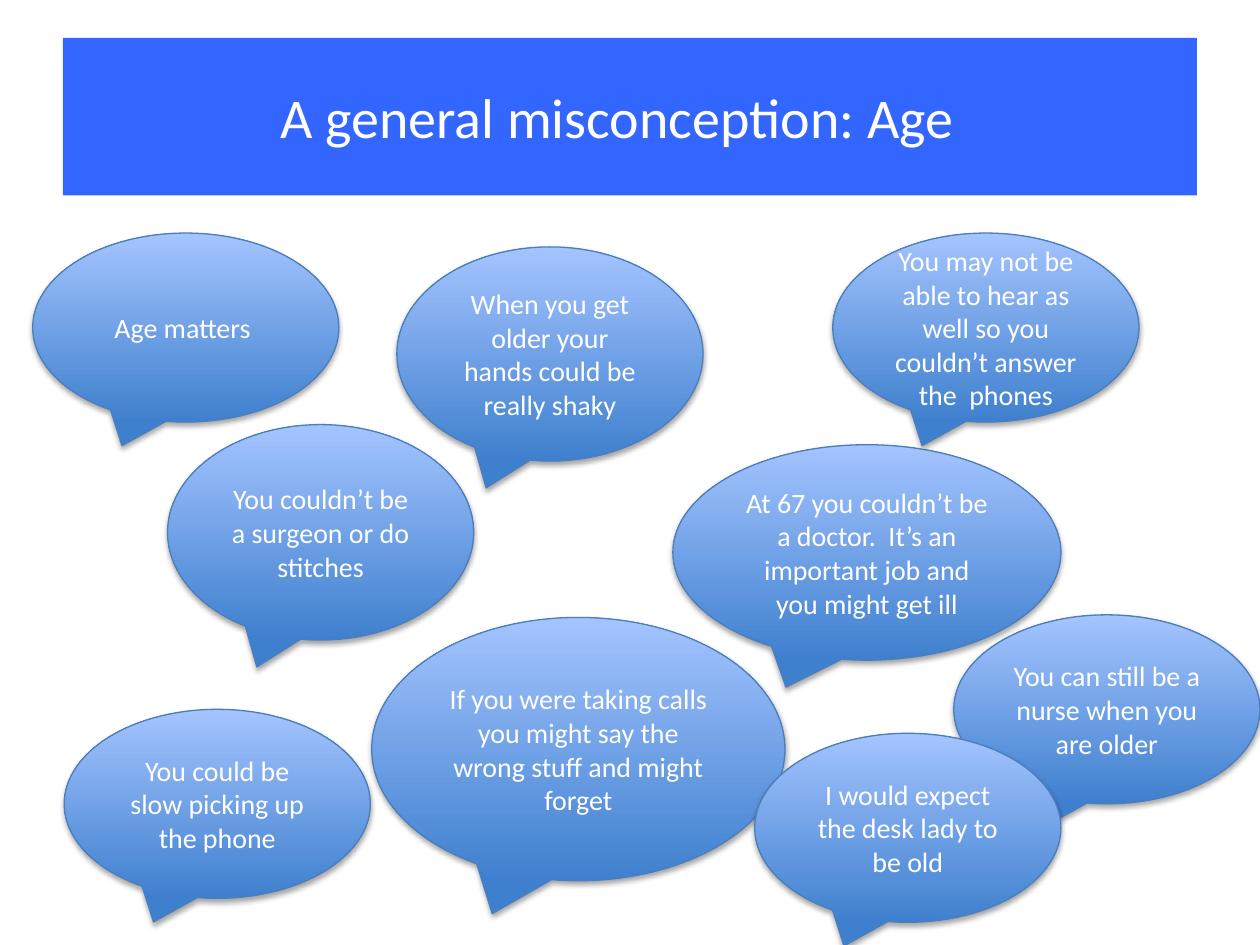
from lxml.etree import SubElement
from pptx import Presentation
from pptx.dml.color import RGBColor
from pptx.enum.shapes import MSO_SHAPE
from pptx.enum.text import MSO_ANCHOR, PP_ALIGN
from pptx.oxml.ns import qn
from pptx.util import Inches, Pt

BUBBLE_WIDTH = 2.43
BUBBLE_HEIGHT = 1.5

BUBBLES = [
    ("Age matters ", 0.26, 1.85, BUBBLE_WIDTH, BUBBLE_HEIGHT),
    ("When you get older your hands could be really shaky", 3.15, 1.96, BUBBLE_WIDTH, 1.7),
    ("You may not be able to hear as well so you couldn’t answer the  phones",
     6.61, 1.85, BUBBLE_WIDTH, BUBBLE_HEIGHT),
    ("You could be slow picking up the phone", 0.51, 5.63, BUBBLE_WIDTH, BUBBLE_HEIGHT),
    ("If you were taking calls you might say the wrong stuff and might forget",
     2.95, 4.9, 3.28, 2.09),
    ("You couldn’t be a surgeon or do stitches", 1.33, 3.37, BUBBLE_WIDTH, 1.71),
    ("You can still be a nurse when you are older", 7.57, 4.88, BUBBLE_WIDTH, BUBBLE_HEIGHT),
    ("At 67 you couldn’t be a doctor.  It’s an important job and you might get ill",
     5.34, 3.53, 3.08, 1.71),
    ("I would expect the desk lady to be old", 5.99, 5.82, BUBBLE_WIDTH, BUBBLE_HEIGHT),
]


def rgb(value):
    """Turn a hex string into a colour."""
    return RGBColor.from_string(value)


def write_text(shape, text, *, size, color, font, align=PP_ALIGN.CENTER):
    """Write one formatted paragraph in the middle of a shape."""
    frame = shape.text_frame
    frame.word_wrap = True
    frame.vertical_anchor = MSO_ANCHOR.MIDDLE
    paragraph = frame.paragraphs[0]
    paragraph.alignment = align
    run = paragraph.add_run()
    run.text = text
    run.font.name = font
    run.font.size = Pt(size)
    run.font.color.rgb = rgb(color)


def add_shadow(shape, *, color, opacity, blur, distance):
    """Give a shape a soft shadow that falls straight down."""
    effects = shape.element.spPr.find(qn("a:effectLst"))
    shadow = SubElement(effects, qn("a:outerShdw"), blurRad=str(Pt(blur)),
                        dist=str(Pt(distance)), dir="5400000", rotWithShape="0")
    tint = SubElement(shadow, qn("a:srgbClr"), val=color)
    SubElement(tint, qn("a:alpha"), val=str(opacity * 1000))


class SlideBuilder:
    """Hold the style and the current slide."""

    font = "Calibri"
    text_color = "FFFFFF"
    banner_color = "3366FF"
    gradient_colors = ("3F80CE", "A4C4FF")
    outline_color = "4B7EBC"

    def __init__(self, slide):
        """Start building on a slide."""
        self.slide = slide

    def add_shape(self, kind, text, left, top, width, height, size):
        """Add a preset shape with centred text."""
        shape = self.slide.shapes.add_shape(
            kind, Inches(left), Inches(top), Inches(width), Inches(height))
        shape.shadow.inherit = False
        write_text(shape, text, size=size, color=self.text_color, font=self.font)
        return shape

    def add_banner(self, text, left, top, width, height):
        """Add the plain title banner."""
        banner = self.add_shape(MSO_SHAPE.RECTANGLE, text, left, top, width, height, 32)
        banner.fill.solid()
        banner.fill.fore_color.rgb = rgb(self.banner_color)
        banner.line.fill.background()

    def add_bubble(self, text, left, top, width, height):
        """Add a shaded speech bubble."""
        bubble = self.add_shape(
            MSO_SHAPE.OVAL_CALLOUT, text, left, top, width, height, 16)
        bubble.fill.gradient()
        bubble.fill.gradient_angle = 90
        for stop, color in zip(bubble.fill.gradient_stops, self.gradient_colors):
            stop.color.rgb = rgb(color)
        bubble.line.color.rgb = rgb(self.outline_color)
        bubble.line.width = Pt(0.75)
        add_shadow(bubble, color="000000", opacity=35, blur=3.1, distance=1.8)


def main():
    """Build and save the presentation."""
    presentation = Presentation()
    presentation.slide_width = Inches(10)
    presentation.slide_height = Inches(7.5)
    builder = SlideBuilder(presentation.slides.add_slide(presentation.slide_layouts[6]))
    builder.add_banner("A general misconception: Age  ", 0.5, 0.3, 9, 1.25)
    for bubble in BUBBLES:
        builder.add_bubble(*bubble)
    presentation.save("out.pptx")


if __name__ == "__main__":
    main()
